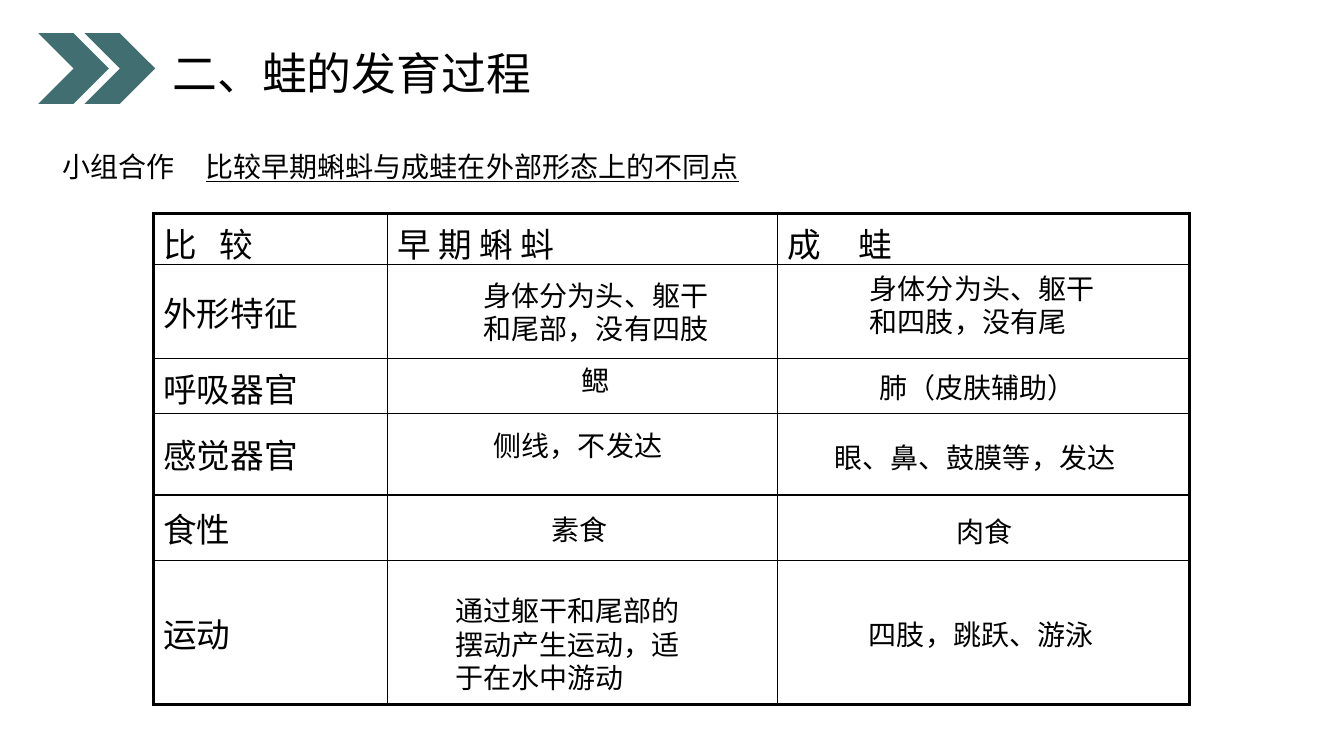
"""Build the slide comparing early tadpoles with adult frogs."""
from lxml import etree
from pptx import Presentation
from pptx import util as u
from pptx.dml import color
from pptx.enum import shapes, text
from pptx.oxml import ns

BLACK = color.RGBColor(0x00, 0x00, 0x00)
TEAL = color.RGBColor(0x41, 0x6E, 0x71)
FONT = "Arial"
COLUMNS = [2.32, 3.87, 4.09]
ROWS = [0.47, 0.94, 0.54, 0.81, 0.65, 1.43]
HEADINGS = ["比   较", "早 期 蝌 蚪", "成     蛙"]
FEATURES = ["外形特征", "呼吸器官", "感觉器官", "食性", "运动"]
ANSWERS = [
    ("身体分为头、躯干\n和尾部，没有四肢", 3.18, 0.59, 2.5, 0.77),
    ("身体分为头、躯干\n和四肢，没有尾", 7.01, 0.52, 3.46, 0.77),
    ("鳃", 4.15, 1.44, 0.49, 0.44),
    ("肺（皮肤辅助）", 7.1, 1.51, 2.21, 0.44),
    ("侧线，不发达", 3.28, 2.08, 1.93, 0.44),
    ("眼、鼻、鼓膜等，发达", 6.66, 2.2, 2.99, 0.44),
    ("素食", 3.85, 2.92, 0.78, 0.44),
    ("肉食", 7.87, 2.94, 0.78, 0.44),
    ("通过躯干和尾部的\n摆动产生运动，适\n于在水中游动", 2.9, 3.72, 2.5, 1.11),
    ("四肢，跳跃、游泳", 7, 3.96, 2.5, 0.44),
]


def place(shape, left, top, width, height):
    """Move a shape to a box given in inches."""
    shape.left, shape.top = u.Inches(left), u.Inches(top)
    shape.width, shape.height = u.Inches(width), u.Inches(height)


def write(frame, words, size=20, underline=None, before=0,
          anchor=text.MSO_ANCHOR.TOP):
    """Fill a text frame, one paragraph for each line of words."""
    frame.word_wrap = True
    frame.vertical_anchor = anchor
    for index, line in enumerate(words.split("\n")):
        para = frame.add_paragraph() if index else frame.paragraphs[0]
        para.alignment = text.PP_ALIGN.LEFT
        para.space_before = u.Pt(before)
        span = para.add_run()
        span.text = line
        span.font.name, span.font.size = FONT, u.Pt(size)
        span.font.color.rgb = BLACK
        span.font.underline = underline


def add_words(page, words, left, top, width, height, **style):
    """Add a text box."""
    box = page.shapes.add_textbox(*map(u.Inches, (left, top, width, height)))
    write(box.text_frame, words, **style)


def set_borders(cell, widths):
    """Draw black cell borders with the given widths in points."""
    properties = cell._tc.get_or_add_tcPr()
    for index, (side, width) in enumerate(widths.items()):
        line = etree.Element(ns.qn(f"a:{side}"), w=str(u.Pt(width)))
        fill = etree.SubElement(line, ns.qn("a:solidFill"))
        etree.SubElement(fill, ns.qn("a:srgbClr"), val=str(BLACK))
        properties.insert(index, line)


def add_header(page, left, top):
    """Place the two chevrons and the title."""
    for step in range(2):
        chevron = page.shapes.add_shape(
            shapes.MSO_SHAPE.CHEVRON, u.Inches(left + 0.46 * step),
            u.Inches(top), u.Inches(0.7), u.Inches(0.7))
        chevron.shadow.inherit = False
        chevron.fill.solid()
        chevron.fill.fore_color.rgb = TEAL
        chevron.line.fill.background()
    title = page.shapes.title
    place(title, left + 1.23, top + 0.07, 3.79, 0.64)
    write(title.text_frame, "二、蛙的发育过程", size=32)


def add_task(page, left, top):
    """Place the group work label and its task."""
    label = page.shapes.add_shape(
        shapes.MSO_SHAPE.OVAL, u.Inches(left), u.Inches(top),
        u.Inches(2.28), u.Inches(0.78))
    label.shadow.inherit = False
    label.fill.background()
    label.line.fill.background()
    write(label.text_frame, "小组合作", anchor=text.MSO_ANCHOR.MIDDLE)
    add_words(page, "比较早期蝌蚪与成蛙在外部形态上的不同点",
              left + 1.75, top + 0.17, 8.89, 0.44, underline=True, before=10)


def add_comparison(page, left, top):
    """Place the comparison table and the answers lying over it."""
    frame = page.shapes.add_table(
        len(ROWS), len(COLUMNS), u.Inches(left), u.Inches(top),
        u.Inches(sum(COLUMNS)), u.Inches(sum(ROWS)))
    table = frame.table
    table.first_row = table.horz_banding = False
    for column, width in zip(table.columns, COLUMNS):
        column.width = u.Inches(width)
    for row, height in zip(table.rows, ROWS):
        row.height = u.Inches(height)
    last_row, last_column = len(ROWS) - 1, len(COLUMNS) - 1
    labels = [HEADINGS] + [[feature, "", ""] for feature in FEATURES]
    for row, line in enumerate(labels):
        for column, words in enumerate(line):
            cell = table.cell(row, column)
            cell.fill.background()
            cell.vertical_anchor = text.MSO_ANCHOR.MIDDLE
            if words:
                write(cell.text_frame, words, size=24, before=4.8, anchor=None)
            outer = {"lnL": column == 0, "lnR": column == last_column,
                     "lnT": row == 0, "lnB": row == last_row}
            set_borders(cell, {side: 2.25 if edge else 1
                               for side, edge in outer.items()})
    for words, across, down, width, height in ANSWERS:
        add_words(page, words, left + across, top + down, width, height)


def main():
    """Build and save the deck."""
    deck = Presentation()
    deck.slide_width, deck.slide_height = u.Inches(13.33), u.Inches(7.5)
    page = deck.slides.add_slide(deck.slide_layouts.get_by_name("Title Only"))
    add_header(page, 0.38, 0.33)
    add_task(page, 0.19, 1.26)
    add_comparison(page, 1.52, 2.12)
    deck.save("out.pptx")


if __name__ == "__main__":
    main()
